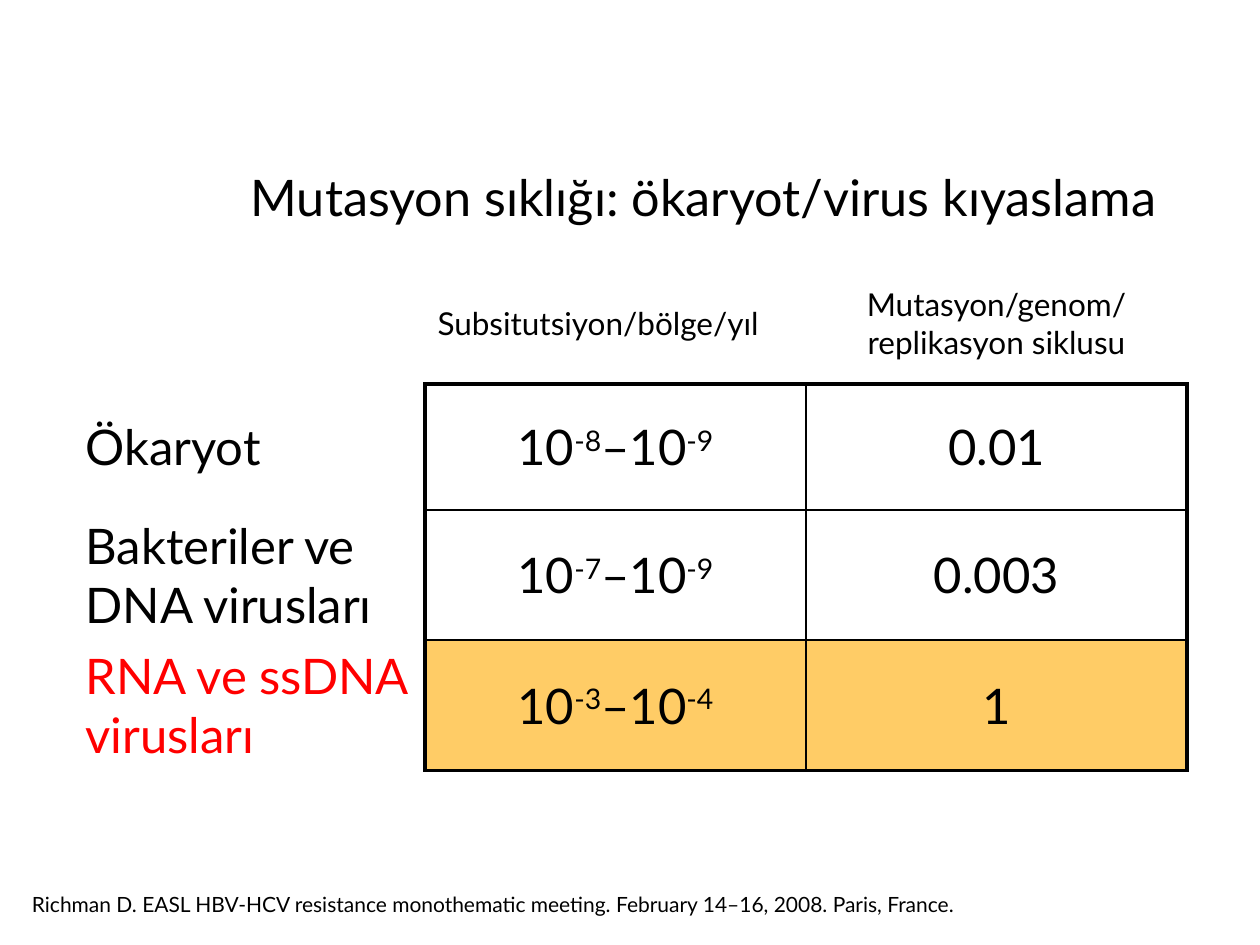
from lxml.etree import SubElement
from pptx import Presentation
from pptx.dml.color import RGBColor
from pptx.enum.text import MSO_ANCHOR as Anchor, MSO_AUTO_SIZE as AutoSize, PP_ALIGN as Align
from pptx.oxml.ns import qn
from pptx.util import Pt

PX = 914400 // 126
FONT = "Lato"
BLACK, RED, WHITE, GOLD = "000000", "FF0000", "FFFFFF", "FFCC66"
THICK, THIN = 2.25, 1

TITLE = "Mutasyon sıklığı: ökaryot/virus kıyaslama"
SOURCE = ("Richman D. EASL HBV-HCV resistance monothematic meeting. "
          "February 14–16, 2008. Paris, France.")
ROWS = [
    ["", "Subsitutsiyon/bölge/yıl", "Mutasyon/genom/ replikasyon siklusu"],
    ["Ökaryot", ("10", "-8", "–10", "-9"), "0.01"],
    ["Bakteriler ve DNA virusları", ("10", "-7", "–10", "-9"), "0.003"],
    ["RNA ve ssDNA virusları", ("10", "-3", "–10", "-4"), "1"],
]
COL_WIDTHS = [352, 381, 381]
ROW_HEIGHTS = [122, 126, 130, 130]
TABLE_LEFT, TABLE_TOP = 73, 262


def px(*values):
    return [v * PX for v in values]


def rgb(color):
    return RGBColor.from_string(color)


def style(r, size, color=BLACK):
    r.font.name = FONT
    r.font.size = Pt(size)
    r.font.color.rgb = rgb(color)


def set_border(cell, side, width):
    ln = SubElement(cell._tc.get_or_add_tcPr(), qn(f"a:ln{side}"))
    if width:
        ln.set("w", str(Pt(width)))
        fill = SubElement(ln, qn("a:solidFill"))
        SubElement(fill, qn("a:srgbClr"), val=BLACK)
    else:
        SubElement(ln, qn("a:noFill"))


def border_widths(row, col):
    last_row, last_col = len(ROWS) - 1, len(COL_WIDTHS) - 1
    if row == 0:
        return {"L": 0, "R": 0, "T": 0, "B": THICK if col else 0}
    if col == 0:
        return {"L": 0, "R": THICK, "T": 0, "B": 0}
    return {
        "L": THICK if col == 1 else THIN,
        "R": THICK if col == last_col else THIN,
        "T": THICK if row == 1 else THIN,
        "B": THICK if row == last_row else THIN,
    }


def fill_cell(cell, row, col, content):
    highlighted = row == len(ROWS) - 1
    size = 28 if row else 18
    cell.vertical_anchor = Anchor.MIDDLE
    for side, width in border_widths(row, col).items():
        set_border(cell, side, width)
    if highlighted and col:
        cell.fill.solid()
        cell.fill.fore_color.rgb = rgb(GOLD)
    else:
        cell.fill.background()
    p = cell.text_frame.paragraphs[0]
    p.space_before = Pt(size * 0.2)
    p.alignment = Align.CENTER if col and (row or col == 2) else Align.LEFT
    parts = (content,) if isinstance(content, str) else content
    for i, part in enumerate(parts):
        r = p.add_run()
        r.text = part
        style(r, size, RED if highlighted and col == 0 else BLACK)
        if i % 2:
            r._r.get_or_add_rPr().set("baseline", "30000")


def add_table(s):
    frame = s.shapes.add_table(
        len(ROWS), len(COL_WIDTHS),
        *px(TABLE_LEFT, TABLE_TOP, sum(COL_WIDTHS), sum(ROW_HEIGHTS)))
    table = frame.table
    table.first_row = table.horz_banding = False
    for column, width in zip(table.columns, COL_WIDTHS):
        column.width = width * PX
    for line, height in zip(table.rows, ROW_HEIGHTS):
        line.height = height * PX
    for row, contents in enumerate(ROWS):
        for col, content in enumerate(contents):
            fill_cell(table.cell(row, col), row, col, content)


def add_source(s):
    tf = s.shapes.add_textbox(*px(32, 892, 1052, 25)).text_frame
    tf.word_wrap = True
    tf.auto_size = AutoSize.SHAPE_TO_FIT_TEXT
    tf.vertical_anchor = Anchor.BOTTOM
    tf.margin_left = tf.margin_right = tf.margin_top = tf.margin_bottom = 0
    tf.text = SOURCE
    style(tf.paragraphs[0].runs[0], 12)


def set_title(s):
    sp = s.shapes.title
    sp.left, sp.top, sp.width, sp.height = px(168, 158, 1071, 77)
    tf = sp.text_frame
    tf.text = TITLE
    tf.auto_size = AutoSize.NONE
    tf.vertical_anchor = Anchor.MIDDLE
    p = tf.paragraphs[0]
    p.alignment = Align.CENTER
    style(p.runs[0], 28.8)


def main():
    prs = Presentation()
    prs.slide_width, prs.slide_height = px(1260, 945)
    s = prs.slides.add_slide(prs.slide_layouts[0])
    s.background.fill.solid()
    s.background.fill.fore_color.rgb = rgb(WHITE)
    subtitle = s.placeholders[1].element
    subtitle.getparent().remove(subtitle)
    set_title(s)
    add_table(s)
    add_source(s)
    prs.save("out.pptx")


if __name__ == "__main__":
    main()
